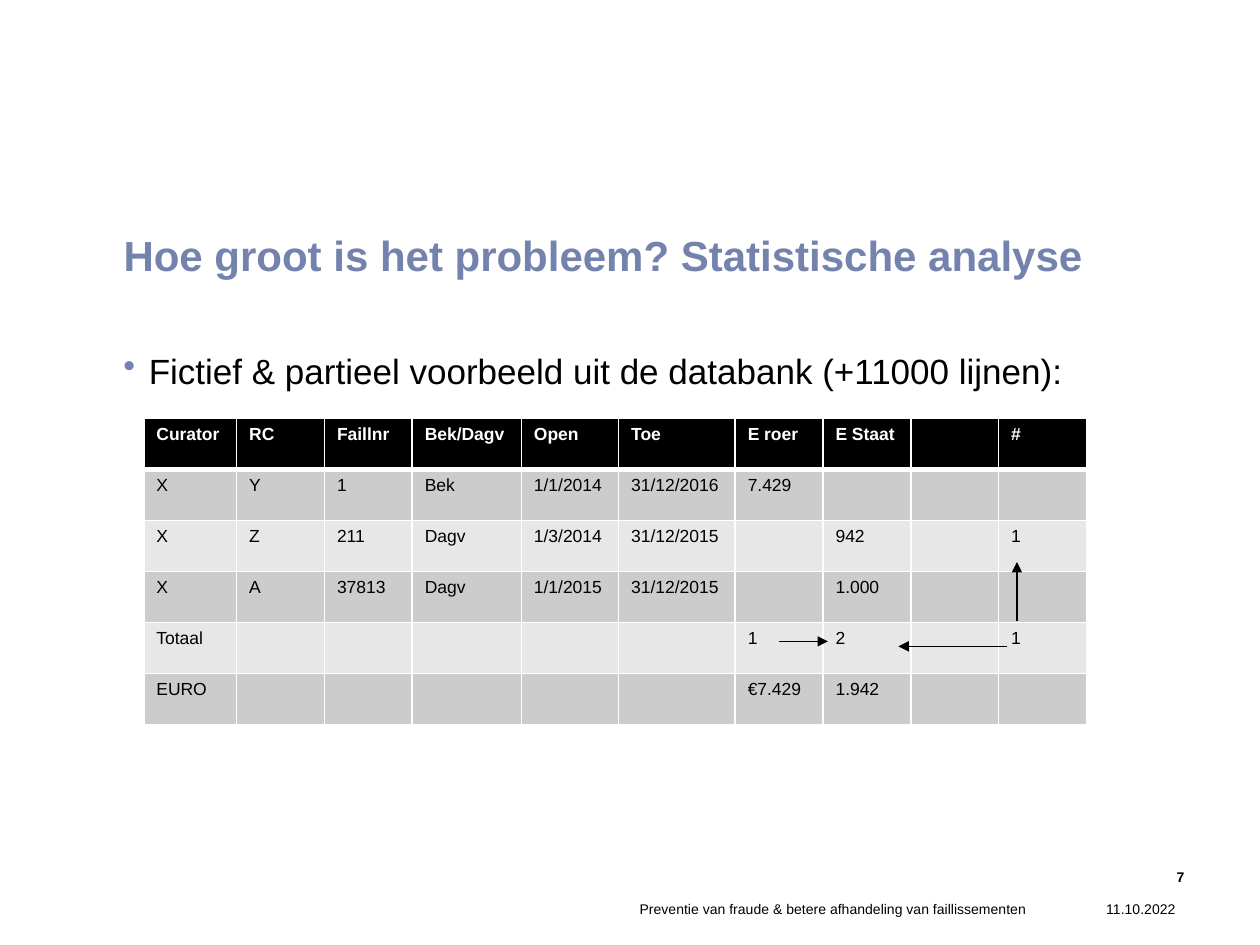
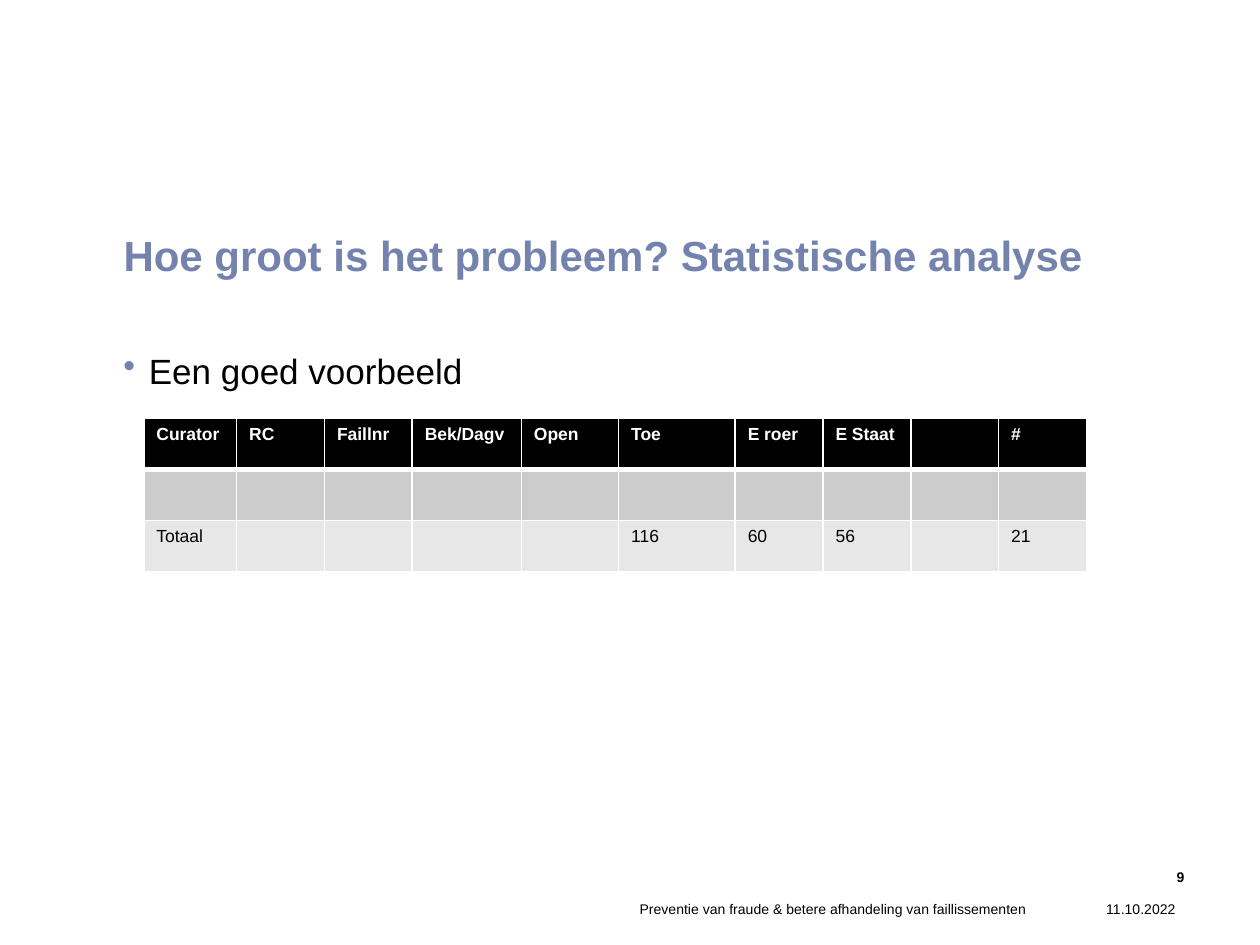
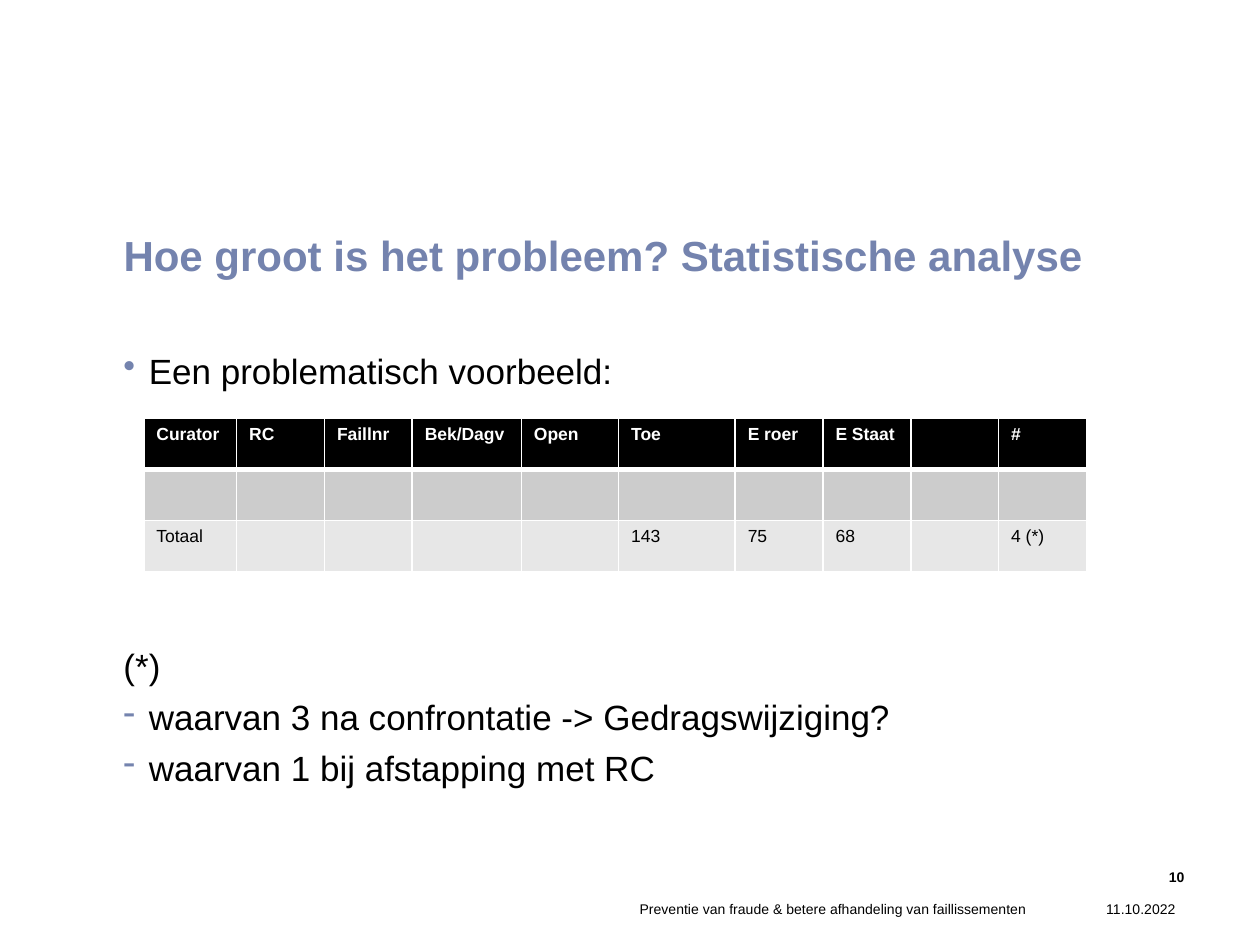
from dataclasses import dataclass

from lxml import etree
from pptx import Presentation
from pptx import util as u
from pptx.dml.color import RGBColor
from pptx.enum import shapes, text
from pptx.oxml.ns import qn

FONT = "Arial"
ACCENT, BLACK, WHITE = "7483AE", "000000", "FFFFFF"
BANDS = ("CCCCCC", "E7E7E7")
TITLE = "Hoe groot is het probleem? Statistische analyse"
FOOTER = "Preventie van fraude & betere afhandeling van faillissementen"
DATE = "11.10.2022"

HEADER = ("Curator", "RC", "Faillnr", "Bek/Dagv", "Open", "Toe", "E roer", "E Staat", "", "#")
COLUMN_WIDTHS = (1.87, 1.77, 1.77, 2.2, 1.96, 2.35, 1.77, 1.77, 1.77, 1.77)
ROW_HEIGHT = 1.03
EMPTY_ROW = ("",) * len(HEADER)


@dataclass(frozen=True)
class Area:
    """A rectangle in centimetres."""
    left: float
    top: float
    width: float
    height: float

    def lengths(self) -> tuple:
        return tuple(u.Cm(n) for n in (self.left, self.top, self.width, self.height))


@dataclass(frozen=True)
class Line:
    content: str
    bullet: str = ""
    space_before: float = 5


@dataclass(frozen=True)
class Arrow:
    start: tuple[float, float]
    end: tuple[float, float]


@dataclass(frozen=True)
class Sheet:
    number: int
    lines: tuple[Line, ...]
    rows: tuple[tuple[str, ...], ...]
    arrows: tuple[Arrow, ...] = ()


TITLE_AREA = Area(2.49, 4.62, 21.64, 2.39)
BODY_AREA = Area(2.49, 7.04, 21.64, 10.31)
DATE_AREA = Area(20.7, 18.03, 3, 0.64)
FOOTER_AREA = Area(5.69, 18.03, 15.01, 0.64)
NUMBER_AREA = Area(22.71, 17.37, 1.42, 0.64)
TABLE_LEFT, TABLE_TOP = 2.9, 8.43

# Insets in centimetres: left, top, right, bottom
MAIN_INSETS = (0, 0, 0.25, 0.13)
FOOTER_INSETS = (0.25, 0.13, 0, 0.13)
NUMBER_INSETS = (0.25, 0.13, 0.25, 0.13)

SHEETS = (
    Sheet(
        7,
        (Line("Fictief & partieel voorbeeld uit de databank (+11000 lijnen):", "•", 0),),
        (
            ("X", "Y", "1", "Bek", "1/1/2014", "31/12/2016", "7.429", "", "", ""),
            ("X", "Z", "211", "Dagv", "1/3/2014", "31/12/2015", "", "942", "", "1"),
            ("X", "A", "37813", "Dagv", "1/1/2015", "31/12/2015", "", "1.000", "", ""),
            ("Totaal", "", "", "", "", "", "1", "2", "", "1"),
            ("EURO", "", "", "", "", "", "€7.429", "1.942", "", ""),
        ),
        (
            Arrow((15.7, 12.93), (16.69, 12.93)),
            Arrow((20.3, 13.03), (18.11, 13.03)),
            Arrow((20.5, 12.52), (20.5, 11.33)),
        ),
    ),
    Sheet(
        9,
        (Line("Een goed voorbeeld", "•", 0),),
        (EMPTY_ROW, ("Totaal", "", "", "", "", "116", "60", "56", "", "21")),
    ),
    Sheet(
        10,
        (
            Line("Een problematisch voorbeeld:", "•", 0),
            Line("(*)", space_before=145),
            Line("waarvan 3 na confrontatie -> Gedragswijziging?", "-"),
            Line("waarvan 1 bij afstapping met RC", "-"),
        ),
        (EMPTY_ROW, ("Totaal", "", "", "", "", "143", "75", "68", "", "4 (*)")),
    ),
)


def rgb(color: str) -> RGBColor:
    return RGBColor.from_string(color)


def add_span(para, content: str, size: float, color: str = BLACK, bold: bool = False) -> None:
    span = para.add_run()
    span.text = content
    for name, value in {"name": FONT, "size": u.Pt(size), "bold": bold}.items():
        setattr(span.font, name, value)
    span.font.color.rgb = rgb(color)


def format_frame(frame, insets: tuple) -> None:
    left, top, right, bottom = (u.Cm(n) for n in insets)
    settings = {
        "margin_left": left, "margin_top": top, "margin_right": right, "margin_bottom": bottom,
        "word_wrap": True, "auto_size": text.MSO_AUTO_SIZE.NONE,
        "vertical_anchor": text.MSO_ANCHOR.TOP,
    }
    for name, value in settings.items():
        setattr(frame, name, value)


def add_box(page, area: Area, insets: tuple):
    frame = page.shapes.add_textbox(*area.lengths()).text_frame
    format_frame(frame, insets)
    return frame


def add_bullet(para, mark: str) -> None:
    properties = para._p.get_or_add_pPr()
    properties.set("marL", str(u.Cm(0.51)))
    properties.set("indent", str(-u.Cm(0.51)))
    color = etree.SubElement(properties, qn("a:buClr"))
    etree.SubElement(color, qn("a:srgbClr"), val=ACCENT)
    etree.SubElement(properties, qn("a:buChar"), char=mark)


def add_title(page) -> None:
    title = page.shapes.title
    title.left, title.top, title.width, title.height = TITLE_AREA.lengths()
    format_frame(title.text_frame, MAIN_INSETS)
    para = title.text_frame.paragraphs[0]
    para.alignment = text.PP_ALIGN.LEFT
    add_span(para, TITLE, 24, ACCENT, True)


def add_body(page, lines: tuple[Line, ...]) -> None:
    frame = add_box(page, BODY_AREA, MAIN_INSETS)
    for index, line in enumerate(lines):
        para = frame.add_paragraph() if index else frame.paragraphs[0]
        if line.bullet:
            add_bullet(para, line.bullet)
        para.space_before = u.Pt(line.space_before)
        add_span(para, line.content, 20)


def add_footers(page, number: int) -> None:
    for area, content, insets, bold in (
        (DATE_AREA, DATE, FOOTER_INSETS, False),
        (FOOTER_AREA, FOOTER, FOOTER_INSETS, False),
        (NUMBER_AREA, str(number), NUMBER_INSETS, True),
    ):
        para = add_box(page, area, insets).paragraphs[0]
        para.alignment = text.PP_ALIGN.RIGHT
        add_span(para, content, 8, bold=bold)


def add_borders(cell, widths: dict[str, float]) -> None:
    properties = cell._tc.get_or_add_tcPr()
    for side, width in widths.items():
        border = etree.SubElement(properties, qn(f"a:ln{side}"), w=str(u.Pt(width)))
        fill = etree.SubElement(border, qn("a:solidFill"))
        etree.SubElement(fill, qn("a:srgbClr"), val=WHITE)


def add_grid(page, body_rows: tuple) -> None:
    rows = (HEADER, *body_rows)
    area = Area(TABLE_LEFT, TABLE_TOP, sum(COLUMN_WIDTHS), ROW_HEIGHT * len(rows))
    table = page.shapes.add_table(len(rows), len(HEADER), *area.lengths()).table
    for column, width in zip(table.columns, COLUMN_WIDTHS):
        column.width = u.Cm(width)
    for row_index, row in enumerate(rows):
        table.rows[row_index].height = u.Cm(ROW_HEIGHT)
        is_header = row_index == 0
        fill = BLACK if is_header else BANDS[(row_index - 1) % 2]
        # The header's thick lower edge is also the upper edge of the next row.
        borders = {"L": 1, "R": 1, "T": 3 if row_index == 1 else 1, "B": 3 if is_header else 1}
        for column_index, content in enumerate(row):
            cell = table.cell(row_index, column_index)
            add_borders(cell, borders)
            cell.fill.solid()
            cell.fill.fore_color.rgb = rgb(fill)
            if content:
                para = cell.text_frame.paragraphs[0]
                add_span(para, content, 10, WHITE if is_header else BLACK, is_header)


def add_arrow(page, arrow: Arrow) -> None:
    ends = (u.Cm(n) for n in (*arrow.start, *arrow.end))
    connector = page.shapes.add_connector(shapes.MSO_CONNECTOR.STRAIGHT, *ends)
    connector.line.color.rgb = rgb(BLACK)
    connector.line.width = u.Pt(0.75)
    etree.SubElement(connector.line._get_or_add_ln(), qn("a:tailEnd"), type="triangle")
    etree.SubElement(connector._element.spPr, qn("a:effectLst"))


def main() -> None:
    deck = Presentation()
    deck.slide_width, deck.slide_height = u.Cm(25.4), u.Cm(19.05)
    title_only = deck.slide_layouts.get_by_name("Title Only")
    for sheet in SHEETS:
        page = deck.slides.add_slide(title_only)
        add_title(page)
        add_body(page, sheet.lines)
        add_footers(page, sheet.number)
        add_grid(page, sheet.rows)
        for arrow in sheet.arrows:
            add_arrow(page, arrow)
    deck.save("out.pptx")


if __name__ == "__main__":
    main()
